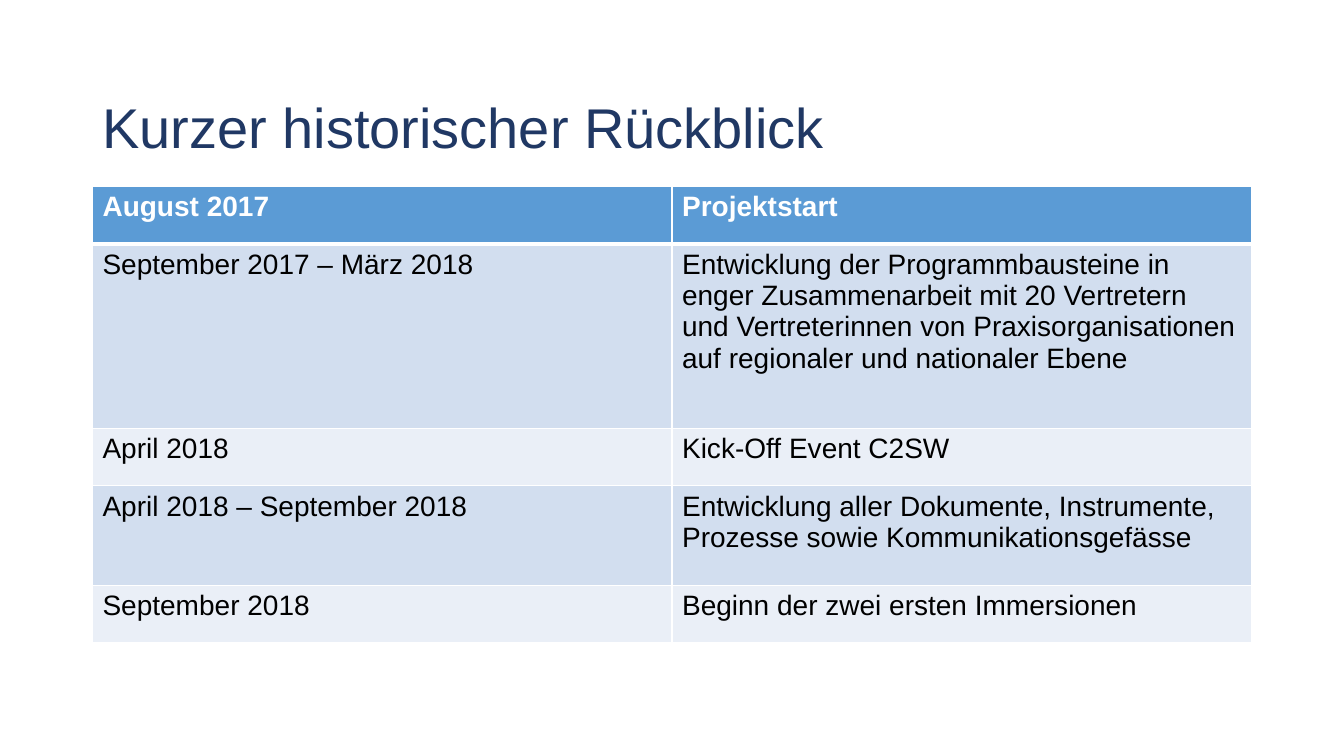
import dataclasses

import lxml.etree
import pptx
import pptx.dml.color
import pptx.enum.text
import pptx.oxml.ns
import pptx.util

Cm = pptx.util.Cm
Pt = pptx.util.Pt

FONT = "Arial"
NAVY, BLUE, WHITE, BLACK = "203864", "5B9BD5", "FFFFFF", "000000"
BANDS = ("D2DEEF", "EAEFF7")
LEFT, WIDTH = Cm(2.33), Cm(29.21)
THIN, THICK = Pt(1), Pt(3)


@dataclasses.dataclass(frozen=True)
class Milestone:
    period: str
    event: str
    height: float


MILESTONES = [
    Milestone("August 2017", "Projektstart", 1.45),
    Milestone(
        "September 2017 – März 2018",
        "Entwicklung der Programmbausteine in enger Zusammenarbeit mit 20 Vertretern "
        "und Vertreterinnen von Praxisorganisationen auf regionaler und nationaler Ebene",
        4.64,
    ),
    Milestone("April 2018", "Kick-Off Event C2SW", 1.45),
    Milestone(
        "April 2018 – September 2018",
        "Entwicklung aller Dokumente, Instrumente, Prozesse sowie Kommunikationsgefässe",
        2.51,
    ),
    Milestone("September 2018", "Beginn der zwei ersten Immersionen", 1.45),
]


def color(value: str) -> pptx.dml.color.RGBColor:
    return pptx.dml.color.RGBColor.from_string(value)


def add_span(para, text: str, size: float, tint: str, bold: bool = False) -> None:
    span = para.add_run()
    span.text = text
    span.font.name = FONT
    span.font.size = Pt(size)
    span.font.bold = bold
    span.font.color.rgb = color(tint)


def add_borders(cell, top: int, bottom: int) -> None:
    """Draw white cell borders; call before the cell is filled."""
    qn = pptx.oxml.ns.qn
    properties = cell._tc.get_or_add_tcPr()
    for side, width in (("L", THIN), ("R", THIN), ("T", top), ("B", bottom)):
        line = lxml.etree.SubElement(properties, qn(f"a:ln{side}"), w=str(int(width)))
        fill = lxml.etree.SubElement(line, qn("a:solidFill"))
        lxml.etree.SubElement(fill, qn("a:srgbClr"), val=WHITE)


def add_title(page, text: str) -> None:
    box = page.shapes.add_textbox(LEFT, Cm(2.34), WIDTH, Cm(1.9))
    frame = box.text_frame
    frame.word_wrap = True
    frame.vertical_anchor = pptx.enum.text.MSO_ANCHOR.MIDDLE
    para = frame.paragraphs[0]
    para.line_spacing = 0.9
    add_span(para, text, 40, NAVY)


def add_timeline(page, milestones: list[Milestone]) -> None:
    height = Cm(sum(milestone.height for milestone in milestones))
    table = page.shapes.add_table(len(milestones), 2, LEFT, Cm(4.7), WIDTH, height).table
    for column in table.columns:
        column.width = WIDTH // 2
    for index, milestone in enumerate(milestones):
        header = index == 0
        table.rows[index].height = Cm(milestone.height)
        for cell, text in zip(table.rows[index].cells, (milestone.period, milestone.event)):
            add_borders(cell, THICK if index == 1 else THIN, THICK if header else THIN)
            cell.fill.solid()
            cell.fill.fore_color.rgb = color(BLUE if header else BANDS[(index - 1) % 2])
            add_span(cell.text_frame.paragraphs[0], text, 20, WHITE if header else BLACK, header)


def main() -> None:
    deck = pptx.Presentation()
    deck.slide_width, deck.slide_height = Cm(33.87), Cm(19.05)
    page = deck.slides.add_slide(deck.slide_layouts[6])
    add_title(page, "Kurzer historischer Rückblick")
    add_timeline(page, MILESTONES)
    deck.save("out.pptx")


if __name__ == "__main__":
    main()
